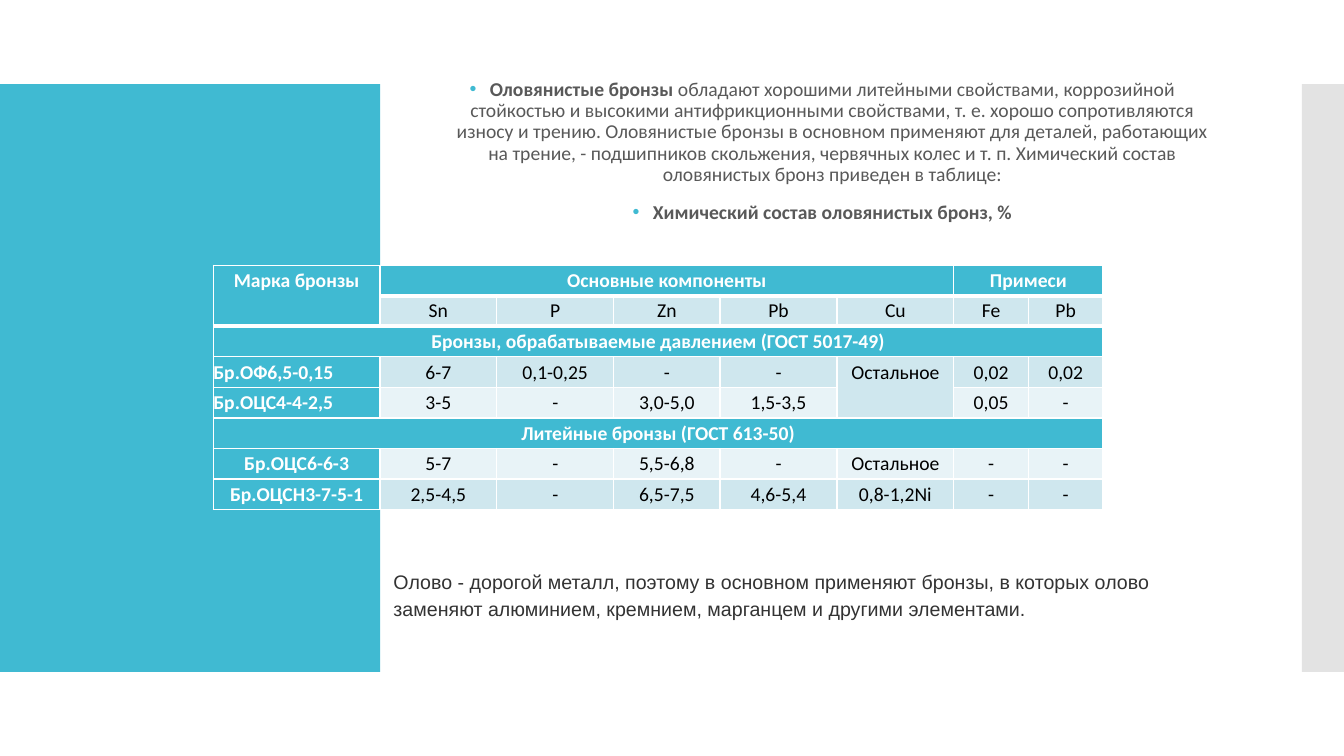
"""Build the slide on the chemical composition of tin bronzes."""
from lxml import etree
from pptx import Presentation
from pptx.dml.color import RGBColor
from pptx.enum import shapes, text
from pptx.oxml import ns
from pptx.util import Pt

TEAL, GRAY, WHITE, BLACK = "40BAD2", "C8C8C8", "FFFFFF", "000000"
BANDS = ["E8F3F7", "CFE7EE"]
CENTER, LEFT = text.PP_ALIGN.CENTER, text.PP_ALIGN.LEFT

INTRO = [
    [("Оловянистые бронзы ", True),
     ("обладают хорошими литейными свойствами, коррозийной стойкостью и высокими "
      "антифрикционными свойствами, т. е. хорошо сопротивляются износу и трению. "
      "Оловянистые бронзы в основном применяют для деталей, работающих на трение, - "
      "подшипников скольжения, червячных колес и т. п. Химический состав оловянистых "
      "бронз приведен в таблице:", False)],
    [("Химический состав оловянистых бронз, %", True)],
]
ROWS = [
    ["Марка бронзы", "Основные компоненты", "", "", "", "", "Примеси", ""],
    ["", "Sn", "P", "Zn", "Pb", "Cu", "Fe", "Pb"],
    ["Бронзы, обрабатываемые давлением (ГОСТ 5017-49)"] + [""] * 7,
    ["Бр.ОФ6,5-0,15", "6-7", "0,1-0,25", "-", "-", "Остальное", "0,02", "0,02"],
    ["Бр.ОЦС4-4-2,5", "3-5", "-", "3,0-5,0", "1,5-3,5", "", "0,05", "-"],
    ["Литейные бронзы (ГОСТ 613-50)"] + [""] * 7,
    ["Бр.ОЦС6-6-3", "5-7", "-", "5,5-6,8", "-", "Остальное", "-", "-"],
    ["Бр.ОЦСН3-7-5-1", "2,5-4,5", "-", "6,5-7,5", "4,6-5,4", "0,8-1,2Ni", "-", "-"],
]
MERGES = [((0, 0), (1, 0)), ((0, 1), (0, 5)), ((0, 6), (0, 7)),
          ((2, 0), (2, 7)), ((3, 5), (4, 5)), ((5, 0), (5, 7))]
LEFT_ALIGNED = [(3, 0), (4, 0)]
COLUMN_WIDTHS = [119, 83.5, 83.5, 76, 83.5, 83.5, 53.3, 53.3]
ROW_HEIGHT = 21.85
CONCLUSION = ("Олово - дорогой металл, поэтому в основном применяют бронзы, в которых олово "
              "заменяют алюминием, кремнием, марганцем и другими элементами.")


def color(value):
    return RGBColor.from_string(value)


def box(left, top, width, height):
    return [Pt(value) for value in (left, top, width, height)]


def apply(target, values):
    for name, value in values.items():
        setattr(target, name, value)


def add_run(paragraph, words, bold, hue, name="Calibri"):
    run = paragraph.add_run()
    run.text = words
    apply(run.font, {"size": Pt(14), "name": name, "bold": bold})
    run.font.color.rgb = color(hue)


def add_child(parent, tag, **attributes):
    return etree.SubElement(parent, ns.qn(tag), attributes)


def add_band(slide, left, width, hue, alpha=None):
    band = slide.shapes.add_shape(shapes.MSO_SHAPE.RECTANGLE, *box(left, 60, width, 420))
    band.shadow.inherit = False
    band.fill.solid()
    band.fill.fore_color.rgb = color(hue)
    band.line.fill.background()
    if alpha:
        add_child(band.fill._xPr.find(".//" + ns.qn("a:srgbClr")), "a:alpha", val=str(alpha * 1000))


def add_intro(slide):
    body = slide.placeholders[1]
    apply(body, dict(zip(("left", "top", "width", "height"), box(299.5, 40.3, 576, 136))))
    frame = body.text_frame
    apply(frame, {"word_wrap": True, "auto_size": text.MSO_AUTO_SIZE.NONE,
                  "vertical_anchor": text.MSO_ANCHOR.MIDDLE})
    for index, runs in enumerate(INTRO):
        paragraph = frame.add_paragraph() if index else frame.paragraphs[0]
        apply(paragraph, {"alignment": CENTER, "line_spacing": 0.9,
                          "space_before": Pt(12 if index else 0)})
        properties = paragraph._p.get_or_add_pPr()
        properties.set("marL", str(Pt(14.4)))
        properties.set("indent", str(Pt(-14.4)))
        add_child(add_child(properties, "a:buClr"), "a:srgbClr", val=TEAL)
        add_child(properties, "a:buFont", typeface="Arial")
        add_child(properties, "a:buChar", char="•")
        for words, bold in runs:
            add_run(paragraph, words, bold, "595959")


def set_borders(cell, row):
    properties = cell._tc.get_or_add_tcPr()
    widths = {"a:lnL": 1, "a:lnR": 1, "a:lnT": 3 if row == 1 else 1, "a:lnB": 3 if row == 0 else 1}
    for tag, width in widths.items():
        line = add_child(properties, tag, w=str(Pt(width)))
        add_child(add_child(line, "a:solidFill"), "a:srgbClr", val=WHITE)


def add_composition_table(slide):
    frame = slide.shapes.add_table(len(ROWS), len(COLUMN_WIDTHS),
                                   *box(152.4, 189.4, sum(COLUMN_WIDTHS), ROW_HEIGHT * len(ROWS)))
    table = frame.table
    for column, width in zip(table.columns, COLUMN_WIDTHS):
        column.width = Pt(width)
    for row_index, values in enumerate(ROWS):
        table.rows[row_index].height = Pt(ROW_HEIGHT)
        section = not any(values[1:])
        for column_index, value in enumerate(values):
            cell = table.cell(row_index, column_index)
            heading = section or row_index == 0 or column_index == 0
            apply(cell, {"margin_left": 0, "margin_right": 0, "margin_top": 0, "margin_bottom": 0})
            set_borders(cell, row_index)
            cell.fill.solid()
            cell.fill.fore_color.rgb = color(TEAL if heading else BANDS[row_index % 2])
            paragraph = cell.text_frame.paragraphs[0]
            aligned_left = (row_index, column_index) in LEFT_ALIGNED
            apply(paragraph, {"alignment": LEFT if aligned_left else CENTER, "line_spacing": 1.15})
            if value:
                add_run(paragraph, value, heading, WHITE if heading else BLACK)
    for first, last in MERGES:
        table.cell(*first).merge(table.cell(*last))


def add_conclusion(slide):
    frame = slide.shapes.add_textbox(*box(274, 401, 562.5, 46)).text_frame
    apply(frame, {"word_wrap": True, "auto_size": text.MSO_AUTO_SIZE.SHAPE_TO_FIT_TEXT})
    paragraph = frame.paragraphs[0]
    paragraph.line_spacing = 1.15
    add_run(paragraph, CONCLUSION, False, "333333", "Arial")


def main():
    presentation = Presentation()
    apply(presentation, {"slide_width": Pt(960), "slide_height": Pt(540)})
    slide = presentation.slides.add_slide(presentation.slide_layouts[1])
    title = slide.shapes.title.element
    title.getparent().remove(title)
    add_band(slide, 0, 271.5, TEAL)
    add_band(slide, 930, 30, GRAY, 50)
    add_intro(slide)
    add_composition_table(slide)
    add_conclusion(slide)
    presentation.save("out.pptx")


if __name__ == "__main__":
    main()
